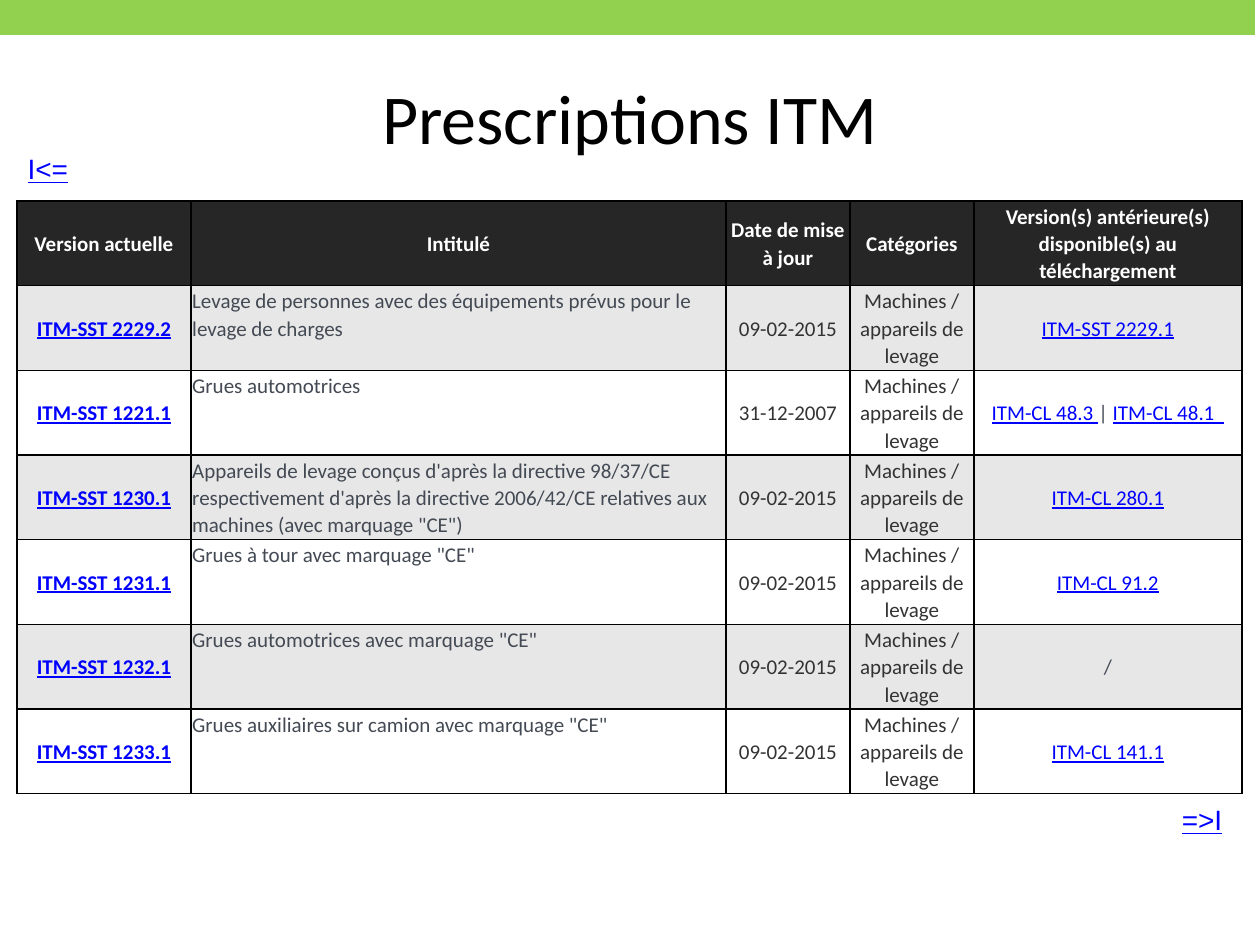
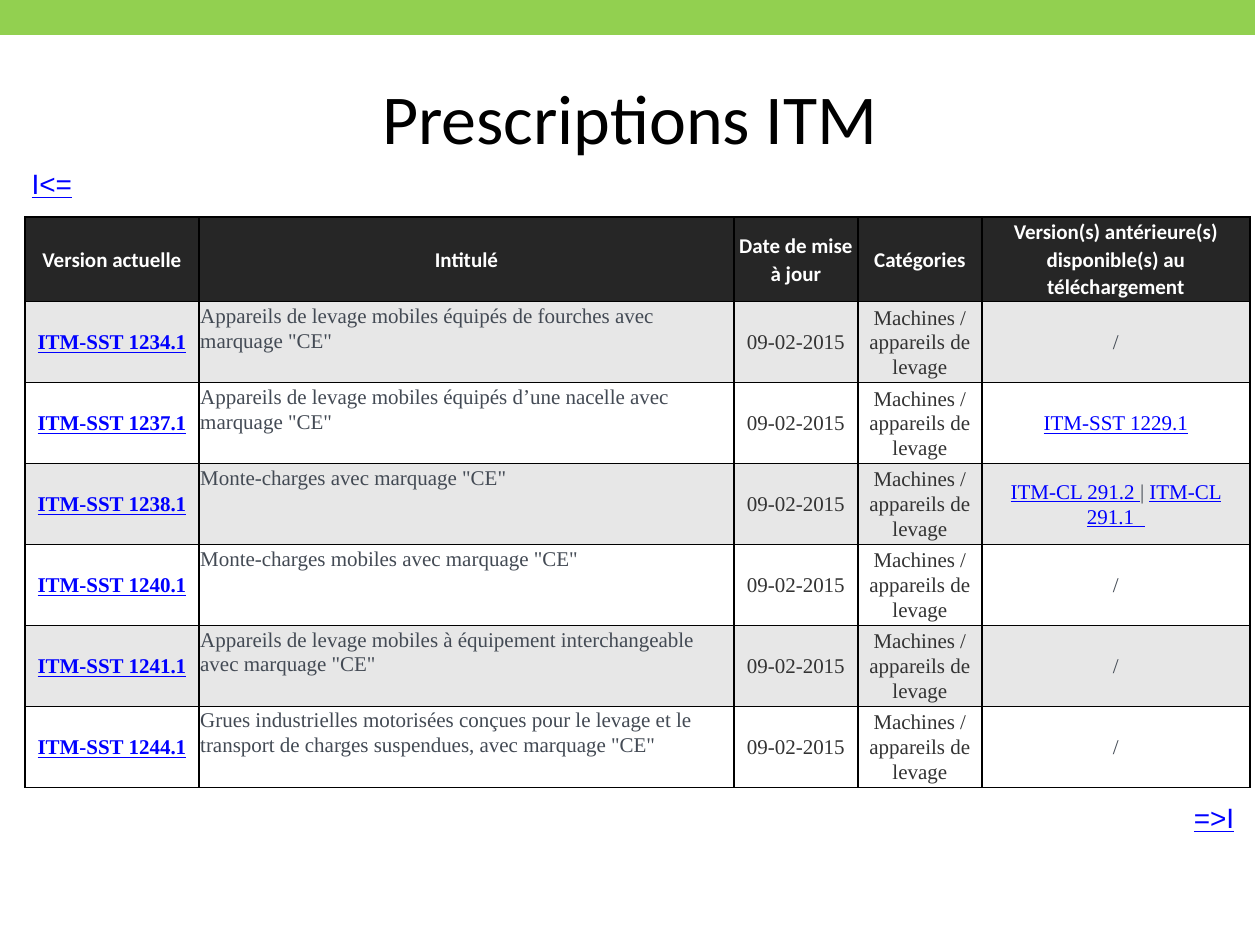
"""Build two slides listing the ITM prescriptions for lifting equipment."""
import lxml.etree
import pptx
import pptx.dml.color
import pptx.enum.shapes
import pptx.enum.text
import pptx.oxml.ns
import pptx.util

EMU_PER_PX = 914400 / 126
NBSP = chr(160)
COLORS = {
    "band": "92D050", "title": "000000", "border": "000000", "link": "0000FF",
    "header": "262626", "header_text": "FFFFFF", "shaded": "E7E7E7", "plain": "FFFFFF",
    "intitule": "434A54", "body": "333333",
}
CENTER = pptx.enum.text.PP_ALIGN.CENTER
LEFT = pptx.enum.text.PP_ALIGN.LEFT
RIGHT = pptx.enum.text.PP_ALIGN.RIGHT
MIDDLE = pptx.enum.text.MSO_ANCHOR.MIDDLE
TOP = pptx.enum.text.MSO_ANCHOR.TOP

HEADINGS = ["Version actuelle", "Intitulé", "Date de mise à jour", "Catégories",
            "Version(s) antérieure(s) disponible(s) au téléchargement"]
CATEGORY = "Machines / appareils de levage"
UPDATED = "09-02-2015"
COLUMN_WIDTHS = [174, 535, 124, 124, 268]
ROW_HEIGHT = 81
BACK_WEIGHTS = [138, 138, 191, 235, 138, 138]
NEXT_WEIGHTS = [135, 55, 242, 297, 80, 135]

PAGES = [
    {
        "font": "Calibri", "list_at": (17, 201),
        "back": (15, 125, 1231, [89, 89]), "next": (44, 772, 1191, [97]),
        "entries": [
            ("ITM-SST 2229.2", "Levage de personnes avec des équipements prévus pour le levage de charges",
             UPDATED, ["ITM-SST 2229.1"]),
            ("ITM-SST 1221.1", "Grues automotrices", "31-12-2007",
             [f"ITM-CL 48.3{NBSP}", f"|{NBSP}", f"ITM-CL 48.1{NBSP}{NBSP}"]),
            ("ITM-SST 1230.1", "Appareils de levage conçus d'après la directive 98/37/CE respectivement "
             "d'après la directive 2006/42/CE relatives aux machines (avec marquage \"CE\")",
             UPDATED, ["ITM-CL 280.1"]),
            ("ITM-SST 1231.1", "Grues à tour avec marquage \"CE\"", UPDATED, ["ITM-CL 91.2"]),
            ("ITM-SST 1232.1", "Grues automotrices avec marquage \"CE\"", UPDATED, ["/"]),
            ("ITM-SST 1233.1", "Grues auxiliaires sur camion avec marquage \"CE\"",
             UPDATED, ["ITM-CL 141.1"]),
        ],
    },
    {
        "font": "Times New Roman", "list_at": (25, 217),
        "back": (19, 155, 1227, [59]), "next": (45, 770, 1202, [97]),
        "entries": [
            ("ITM-SST 1234.1", "Appareils de levage mobiles équipés de fourches avec marquage \"CE\"",
             UPDATED, ["/"]),
            ("ITM-SST 1237.1", "Appareils de levage mobiles équipés d’une nacelle avec marquage \"CE\"",
             UPDATED, ["ITM-SST 1229.1"]),
            ("ITM-SST 1238.1", "Monte-charges avec marquage \"CE\"", UPDATED,
             [f"ITM-CL 291.2{NBSP}", f"|{NBSP}", f"ITM-CL 291.1{NBSP}{NBSP}"]),
            ("ITM-SST 1240.1", "Monte-charges mobiles avec marquage \"CE\"", UPDATED, ["/"]),
            ("ITM-SST 1241.1", "Appareils de levage mobiles à équipement interchangeable "
             "avec marquage \"CE\"", UPDATED, ["/"]),
            ("ITM-SST 1244.1", "Grues industrielles motorisées conçues pour le levage et le transport "
             "de charges suspendues, avec marquage \"CE\"", UPDATED, ["/"]),
        ],
    },
]


def add_grid(slide, left, top, widths, heights, border=None):
    """Add an unfilled table sized in px, with borders in the given colour or none."""
    box = [round(n * EMU_PER_PX) for n in (left, top, sum(widths), sum(heights))]
    grid = slide.shapes.add_table(len(heights), len(widths), *box).table
    grid.first_row = grid.horz_banding = False
    for column, width in zip(grid.columns, widths):
        column.width = round(width * EMU_PER_PX)
    for row, height in zip(grid.rows, heights):
        row.height = round(height * EMU_PER_PX)
    for cell in grid.iter_cells():
        properties = cell._tc.get_or_add_tcPr()
        for side in ("lnL", "lnR", "lnT", "lnB"):
            edge = lxml.etree.SubElement(
                properties, pptx.oxml.ns.qn(f"a:{side}"), w=str(pptx.util.Pt(1)))
            if border:
                ink = lxml.etree.SubElement(edge, pptx.oxml.ns.qn("a:solidFill"))
                lxml.etree.SubElement(ink, pptx.oxml.ns.qn("a:srgbClr"), val=COLORS[border])
            else:
                lxml.etree.SubElement(edge, pptx.oxml.ns.qn("a:noFill"))
        cell.fill.background()
    return grid


def add_run(paragraph, text, font, size, color, bold=False, underline=False):
    """Append one formatted run to a paragraph."""
    run = paragraph.add_run()
    run.text = text
    run.font.name = font
    run.font.size = pptx.util.Pt(size)
    run.font.bold = bold
    run.font.underline = underline
    run.font.color.rgb = pptx.dml.color.RGBColor.from_string(COLORS[color])


prs = pptx.Presentation()
prs.slide_width = round(1260 * EMU_PER_PX)
prs.slide_height = round(945 * EMU_PER_PX)
title_only = prs.slide_layouts[5]
slides = [prs.slides.add_slide(title_only) for page in PAGES]

band = slides[0].shapes.add_shape(
    pptx.enum.shapes.MSO_SHAPE.RECTANGLE, 0, 0, round(1255 * EMU_PER_PX), round(35 * EMU_PER_PX))
band.shadow.inherit = False
band.fill.solid()
band.fill.fore_color.rgb = pptx.dml.color.RGBColor.from_string(COLORS["band"])
band.line.fill.background()
band.element.nvSpPr.cNvPr.set("id", "20")
prs.slide_master.shapes.element.insert(2, band.element)

for slide, page in zip(slides, PAGES):
    title = slide.shapes.title
    title.left, title.top, title.width, title.height = [
        round(n * EMU_PER_PX) for n in (63, 38, 1134, 157)]
    title.text_frame.vertical_anchor = MIDDLE
    heading = title.text_frame.paragraphs[0]
    heading.alignment = CENTER
    add_run(heading, "Prescriptions ITM", "Calibri", 40, "title")

    for key, weights, label, index, align in [
            ("back", BACK_WEIGHTS, "I<=", 0, LEFT), ("next", NEXT_WEIGHTS, "=>I", 5, RIGHT)]:
        left, top, width, heights = page[key]
        widths = [width * weight / sum(weights) for weight in weights]
        navigation = add_grid(slide, left, top, widths, heights)
        if len(heights) > 1:
            navigation.cell(1, 0).merge(navigation.cell(1, 5))
        link_cell = navigation.cell(0, index)
        link_cell.vertical_anchor = MIDDLE
        link = link_cell.text_frame.paragraphs[0]
        link.alignment = align
        add_run(link, label, "Arial", 16, "link", underline=True)

    rows = [[[text] for text in HEADINGS]]
    rows += [[[version], [intitule], [date], [CATEGORY], earlier]
             for version, intitule, date, earlier in page["entries"]]
    prescriptions = add_grid(
        slide, *page["list_at"], COLUMN_WIDTHS, [ROW_HEIGHT] * len(rows), border="border")
    for r, row in enumerate(rows):
        row_fill = "header" if r == 0 else "shaded" if r % 2 else "plain"
        for c, texts in enumerate(row):
            cell = prescriptions.cell(r, c)
            cell.margin_left = cell.margin_right = cell.margin_top = cell.margin_bottom = \
                pptx.util.Inches(0.01)
            is_intitule = r > 0 and c == 1
            cell.vertical_anchor = TOP if is_intitule else MIDDLE
            cell.fill.solid()
            cell.fill.fore_color.rgb = pptx.dml.color.RGBColor.from_string(COLORS[row_fill])
            paragraph = cell.text_frame.paragraphs[0]
            paragraph.alignment = LEFT if is_intitule else CENTER
            paragraph.line_spacing = 1.07
            paragraph.space_after = pptx.util.Pt(8)
            for text in texts:
                is_link = r > 0 and text.startswith("ITM-")
                if r == 0:
                    color = "header_text"
                elif is_link:
                    color = "link"
                else:
                    color = "body" if c in (2, 3) else "intitule"
                add_run(paragraph, text, page["font"] if r else "Calibri", 12, color,
                        bold=r == 0 or c == 0, underline=is_link)

prs.save("out.pptx")
